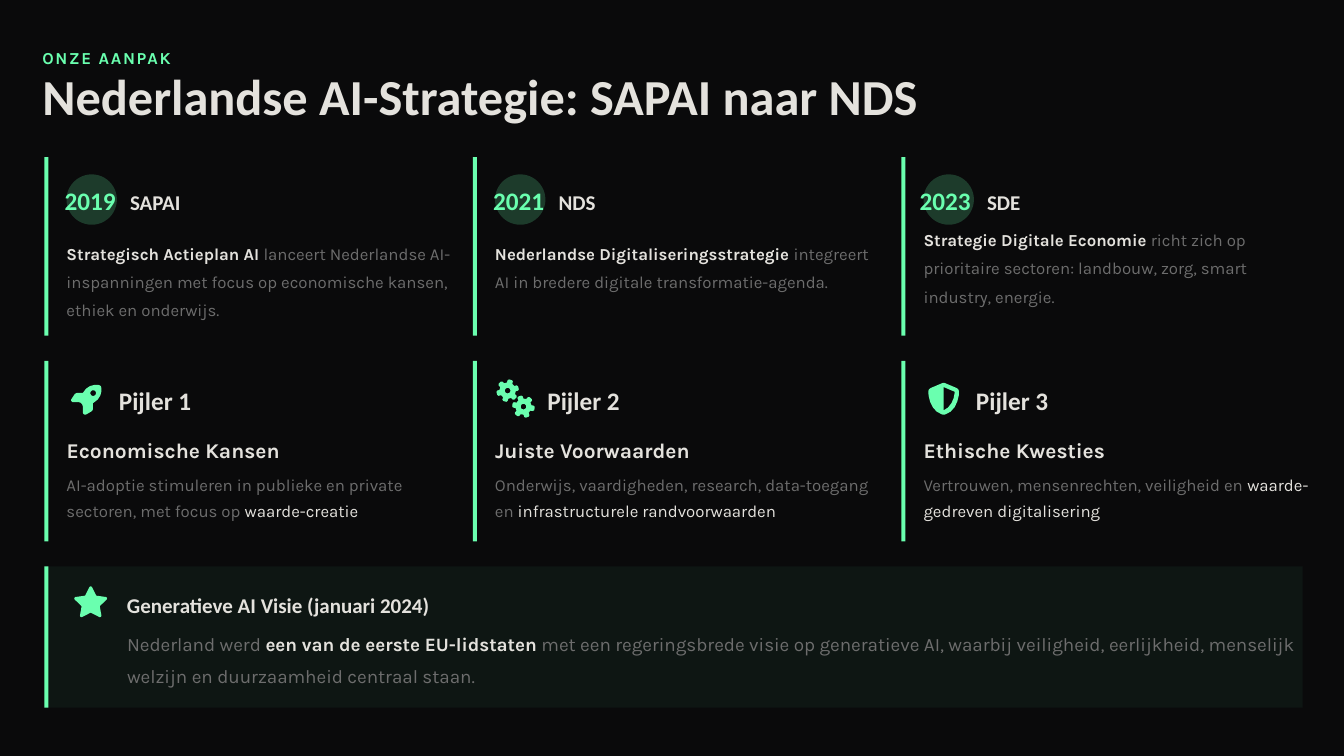
from math import cos, radians, sin

from lxml import etree
from pptx import Presentation
from pptx.dml.color import RGBColor
from pptx.enum.shapes import MSO_SHAPE
from pptx.enum.text import MSO_ANCHOR
from pptx.oxml.ns import qn
from pptx.util import Inches, Pt

RECTANGLE, OVAL, STAR = MSO_SHAPE.RECTANGLE, MSO_SHAPE.OVAL, MSO_SHAPE.STAR_5_POINT
MIDDLE = MSO_ANCHOR.MIDDLE

BLACK = RGBColor(0x0A, 0x0A, 0x0B)
GREEN = RGBColor(0x6A, 0xFF, 0xAF)
LIGHT = RGBColor(0xE4, 0xE2, 0xDD)
GREY = RGBColor(0x6D, 0x6D, 0x6D)
HEADING_FONT, BODY_FONT = "Calibri", "Karla"

COLUMN_LEFT, COLUMN_STEP = 0.44, 4.25
BAR_WIDTH = 0.04
INDENT = 0.22

# Year, offset and width of the year, short name, its width, full name, description, height
MILESTONES = [
    ("2019", 0.2, 0.68, "SAPAI", 0.69, "Strategisch Actieplan AI",
     " lanceert Nederlandse AI-inspanningen met focus op economische kansen, "
     "ethiek en onderwijs.", 0.81),
    ("2021", 0.2, 0.68, "NDS", 0.53, "Nederlandse Digitaliseringsstrategie",
     " integreert AI in bredere digitale transformatie-agenda.", 0.54),
    ("2023", 0.18, 0.72, "SDE", 0.5, "Strategie Digitale Economie",
     " richt zich op prioritaire sectoren: landbouw, zorg, smart industry, energie.", 0.54),
]
PILLARS = [
    ("Pijler 1", "Economische Kansen",
     "AI-adoptie stimuleren in publieke en private sectoren, met focus op ",
     "waarde-creatie"),
    ("Pijler 2", "Juiste Voorwaarden",
     "Onderwijs, vaardigheden, research, data-toegang en ",
     "infrastructurele randvoorwaarden"),
    ("Pijler 3", "Ethische Kwesties",
     "Vertrouwen, mensenrechten, veiligheid en ",
     "waarde-gedreven digitalisering"),
]


def ring(x, y, radius, count=20):
    return [(x + radius * cos(radians(360 * step / count)),
             y + radius * sin(radians(360 * step / count))) for step in range(count)]


def gear(x, y, first_tooth):
    """Outline of a six-toothed wheel, followed by its hole."""
    outline = []
    for tooth in range(6):
        for offset, radius in ((-20, 80), (-15, 104), (-8, 112), (8, 112), (15, 104), (20, 80)):
            angle = radians(first_tooth + 60 * tooth + offset)
            outline.append((x + radius * cos(angle), y + radius * sin(angle)))
    return [outline, ring(x, y, 27)]


# Icon outlines in thousandths of an inch, measured from the left of the card and y = 3.75
ROCKET = [
    [(340, 240), (280, 240), (267, 230), (265, 215), (302, 158), (322, 148), (382, 148),
     (412, 108), (452, 80), (500, 68), (542, 70), (558, 78), (564, 92), (566, 128),
     (556, 172), (530, 214), (482, 250), (482, 310), (472, 328), (416, 362), (400, 364),
     (388, 357), (382, 346), (382, 284), (374, 260), (360, 246)],
    ring(484, 150, 28),
]
GEARS = gear(345, 125, -15) + gear(502, 284, 10)
SHIELD = [
    [(420, 48), (432, 50), (550, 100), (566, 113), (572, 130), (570, 175), (555, 235),
     (528, 290), (490, 333), (438, 361), (420, 364), (402, 361), (350, 333), (312, 290),
     (285, 235), (270, 175), (268, 130), (274, 113), (290, 100), (408, 50)],
    [(420, 90), (420, 321), (463, 293), (497, 250), (519, 200), (531, 137)],
]
ICONS = [ROCKET, GEARS, SHIELD]


def paint(shape, alpha=100):
    shape.shadow.inherit = False
    shape.fill.solid()
    shape.fill.fore_color.rgb = GREEN
    shape.line.fill.background()
    if alpha < 100:
        color = shape._element.spPr.find(".//" + qn("a:srgbClr"))
        etree.SubElement(color, qn("a:alpha"), val=str(alpha * 1000))


def add_block(page, kind, left, top, width, height, alpha=100):
    shape = page.shapes.add_shape(kind, Inches(left), Inches(top), Inches(width), Inches(height))
    paint(shape, alpha)
    return shape


def add_bar(page, left, top, height):
    add_block(page, RECTANGLE, left, top, BAR_WIDTH, height)


def add_icon(page, contours, left, top):
    first, *others = contours
    builder = page.shapes.build_freeform(*first[0], scale=Inches(1) / 1000)
    builder.add_line_segments(first[1:], close=True)
    for contour in others:
        builder.move_to(*contour[0])
        builder.add_line_segments(contour[1:], close=True)
    paint(builder.convert_to_shape(Inches(left), Inches(top)))


def add_star(page, left, top):
    star = add_block(page, STAR, left, top, 0.3, 0.28)
    star.adjustments[0] = 0.25
    star.line.color.rgb = GREEN
    star.line.width = Pt(2)
    etree.SubElement(star.line._get_or_add_ln(), qn("a:round"))


def add_text(page, left, top, width, height, runs, size, font, spacing, tracking=0):
    """Runs are (text, colour, bold); tracking is in points."""
    box = page.shapes.add_textbox(Inches(left), Inches(top), Inches(width), Inches(height))
    frame = box.text_frame
    frame.word_wrap = True
    frame.vertical_anchor = MIDDLE
    frame.margin_left = frame.margin_right = frame.margin_top = frame.margin_bottom = 0
    para = frame.paragraphs[0]
    para.line_spacing = spacing
    for text, color, bold in runs:
        span = para.add_run()
        span.text = text
        span.font.name = font
        span.font.size = Pt(size)
        span.font.bold = bold
        span.font.color.rgb = color
        if tracking:
            span.font._element.set("spc", str(round(tracking * 100)))


def add_milestone(page, left, milestone):
    year, year_offset, year_width, name, name_width, title, description, height = milestone
    inner = left + INDENT
    add_bar(page, left, 1.56, 1.77)
    add_block(page, OVAL, inner, 1.73, 0.5, 0.5, alpha=20)
    add_text(page, left + year_offset, 1.81, year_width, 0.33,
             [(year, GREEN, True)], 18, HEADING_FONT, 1.1)
    add_text(page, left + 0.85, 1.83, name_width, 0.29,
             [(name, LIGHT, True)], 15, HEADING_FONT, 1.2)
    add_text(page, inner, 2.35, 3.83, height,
             [(title, LIGHT, True), (description, GREY, False)], 12, BODY_FONT, 1.4)


def add_pillar(page, left, pillar, icon):
    label, title, description, emphasis = pillar
    inner = left + INDENT
    add_bar(page, left, 3.58, 1.79)
    add_icon(page, icon, left, 3.75)
    add_text(page, left + 0.74, 3.79, 0.86, 0.33,
             [(label, LIGHT, True)], 18, HEADING_FONT, 1.1)
    add_text(page, inner, 4.29, 3.85, 0.29, [(title, LIGHT, True)], 15, BODY_FONT, 1.2)
    add_text(page, inner, 4.66, 3.83, 0.5,
             [(description, GREY, False), (emphasis, LIGHT, False)], 12, BODY_FONT, 1.3)


def add_vision(page):
    top, height = 5.62, 1.4
    add_block(page, RECTANGLE, COLUMN_LEFT, top, 12.48, height, alpha=5)
    add_bar(page, COLUMN_LEFT, top, height)
    add_star(page, 0.75, 5.83)
    add_text(page, 1.26, 5.83, 11.76, 0.29,
             [("Generatieve AI Visie (januari 2024)", LIGHT, True)], 15, HEADING_FONT, 1.2)
    add_text(page, 1.26, 6.2, 11.75, 0.61, [
        ("Nederland werd ", GREY, False),
        ("een van de eerste EU-lidstaten", LIGHT, True),
        (" met een regeringsbrede visie op generatieve AI, waarbij veiligheid, eerlijkheid, "
         "menselijk welzijn en duurzaamheid centraal staan.", GREY, False),
    ], 13.5, BODY_FONT, 1.4)


def main():
    deck = Presentation()
    deck.slide_width, deck.slide_height = Inches(13.33), Inches(7.5)
    page = deck.slides.add_slide(deck.slide_layouts[6])
    page.background.fill.solid()
    page.background.fill.fore_color.rgb = BLACK

    add_text(page, 0.42, 0.42, 12.58, 0.25, [("ONZE AANPAK", GREEN, True)],
             12, BODY_FONT, 1.3, tracking=1.2)
    add_text(page, 0.42, 0.75, 12.75, 0.5,
             [("Nederlandse AI-Strategie: SAPAI naar NDS", LIGHT, True)], 36, HEADING_FONT, 0.8)
    lefts = [COLUMN_LEFT + COLUMN_STEP * column for column in range(3)]
    for left, milestone in zip(lefts, MILESTONES):
        add_milestone(page, left, milestone)
    for left, pillar, icon in zip(lefts, PILLARS, ICONS):
        add_pillar(page, left, pillar, icon)
    add_vision(page)
    deck.save("out.pptx")


if __name__ == "__main__":
    main()
